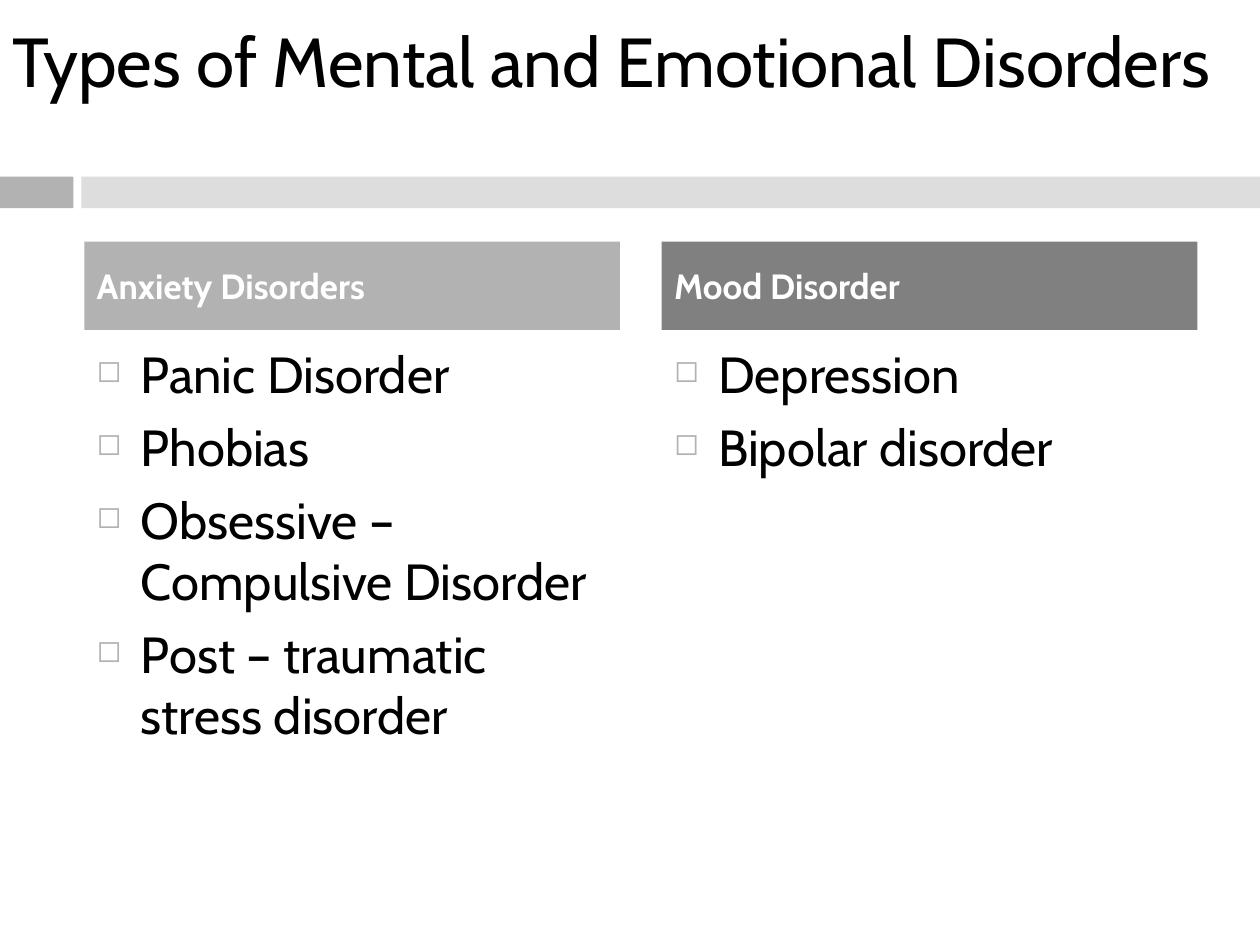
import pptx
import pptx.util
import pptx.dml.color
import pptx.enum.shapes
import pptx.enum.text
import pptx.oxml.ns
import lxml.etree

Cm = pptx.util.Cm
Pt = pptx.util.Pt
FONT = "Cabin"
LIGHT_GRAY = "B2B2B2"
COLUMN_WIDTH = 10.8
COLUMNS = [
    (1.7, LIGHT_GRAY, "Anxiety Disorders",
     ["Panic Disorder", "Phobias", "Obsessive – Compulsive Disorder",
      "Post – traumatic stress disorder"]),
    (13.34, "808080", "Mood Disorder", ["Depression", "Bipolar disorder"]),
]


def color(value):
    return pptx.dml.color.RGBColor.from_string(value)


def add_bullet(paragraph):
    properties = paragraph._p.get_or_add_pPr()
    properties.set("marL", str(Cm(0.89)))
    properties.set("indent", str(Cm(-0.89)))

    def add_child(parent, tag, **attributes):
        return lxml.etree.SubElement(parent, pptx.oxml.ns.qn(tag), **attributes)

    bullet_color = add_child(properties, "a:buClr")
    add_child(bullet_color, "a:srgbClr", val=LIGHT_GRAY)
    add_child(properties, "a:buSzPct", val="60000")
    add_child(properties, "a:buChar", char="◻")


def write_text(shape, lines, size, text_color="000000", bold=False,
               space_before=0, middle=False, bullets=False):
    frame = shape.text_frame
    frame.word_wrap = True
    anchor = pptx.enum.text.MSO_ANCHOR
    frame.vertical_anchor = anchor.MIDDLE if middle else anchor.TOP
    for index, line in enumerate(lines):
        paragraph = frame.add_paragraph() if index else frame.paragraphs[0]
        paragraph.alignment = pptx.enum.text.PP_ALIGN.LEFT
        paragraph.space_before = Pt(space_before)
        if bullets:
            add_bullet(paragraph)
        run = paragraph.add_run()
        run.text = line
        run.font.name = FONT
        run.font.size = Pt(size)
        run.font.bold = bold
        run.font.color.rgb = color(text_color)


def add_text_box(slide, left, top, width, height, lines, size, **text_format):
    shape = slide.shapes.add_textbox(Cm(left), Cm(top), Cm(width), Cm(height))
    write_text(shape, lines, size, **text_format)


def add_bar(slide, left, top, width, height, fill):
    shape = slide.shapes.add_shape(
        pptx.enum.shapes.MSO_SHAPE.RECTANGLE,
        Cm(left), Cm(top), Cm(width), Cm(height))
    shape.shadow.inherit = False
    shape.fill.solid()
    shape.fill.fore_color.rgb = color(fill)
    shape.line.fill.background()
    return shape


def add_column(slide, left, fill, heading, items):
    add_text_box(slide, left, 6.78, COLUMN_WIDTH, 9.96, items, 29,
                 space_before=7, bullets=True)
    header = add_bar(slide, left, 4.87, COLUMN_WIDTH, 1.78, fill)
    write_text(header, [heading], 20, text_color="FFFFFF", bold=True,
               space_before=7, middle=True)


def main():
    presentation = pptx.Presentation()
    presentation.slide_width = Cm(25.4)
    presentation.slide_height = Cm(19.05)
    slide = presentation.slides.add_slide(presentation.slide_layouts[6])
    add_bar(slide, 0, 3.56, 1.48, 0.64, LIGHT_GRAY)
    add_bar(slide, 1.64, 3.56, 23.76, 0.64, "DDDDDD")
    add_text_box(slide, 0, 0, 25.43, 2.41,
                 ["Types of Mental and Emotional Disorders"], 39.6, middle=True)
    for column in COLUMNS:
        add_column(slide, *column)
    presentation.save("out.pptx")


if __name__ == "__main__":
    main()
